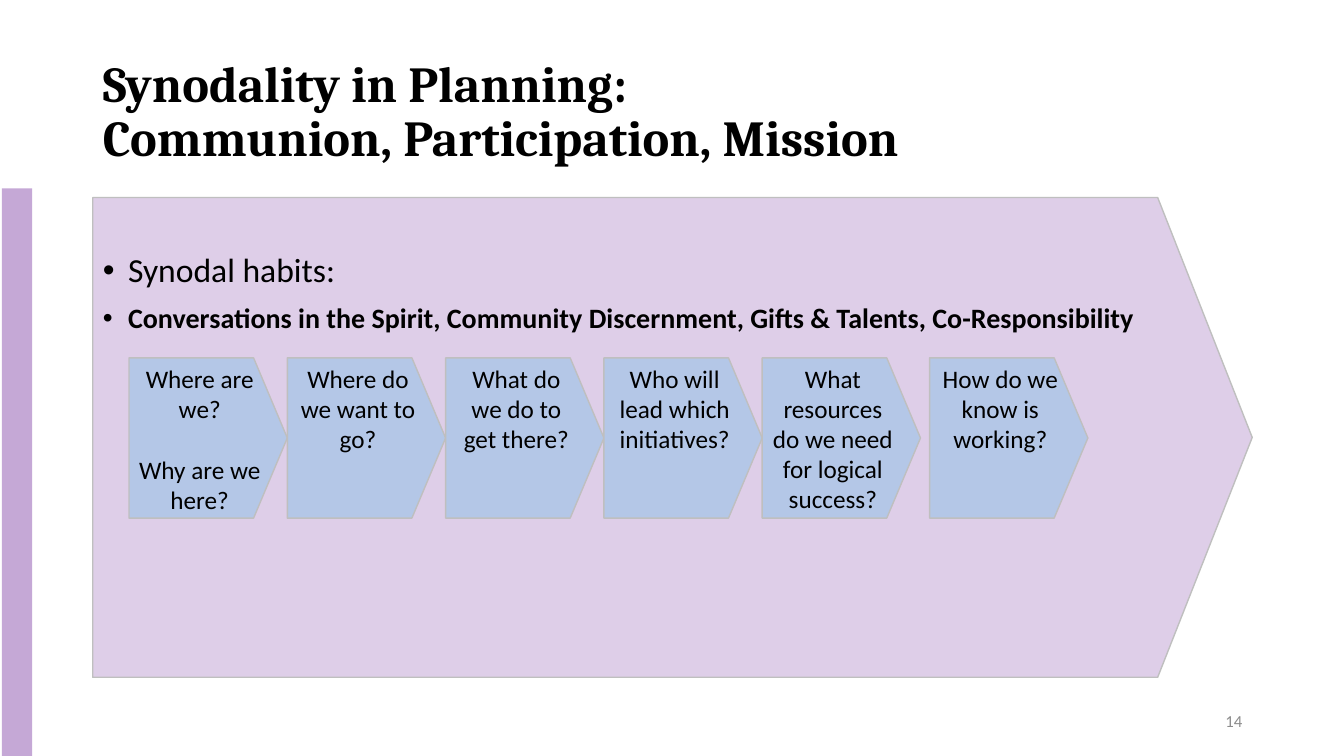
import pptx
import pptx.dml.color
import pptx.enum.shapes
import pptx.enum.text
import pptx.oxml.xmlchemy
import pptx.util
from pptx.oxml.xmlchemy import OxmlElement
from pptx.util import Inches, Pt

ALIGN = pptx.enum.text.PP_ALIGN
ANCHOR = pptx.enum.text.MSO_ANCHOR
SHAPES = pptx.enum.shapes.MSO_SHAPE

COLORS = {
    "text": "000000",
    "number": "8C8C8C",
    "bar": "AD84C6",
    "arrow": "DECEE8",
    "step": "B4C7E7",
    "outline": "BFBFBF",
}

HABITS = [
    ("Synodal habits:", 24, False),
    ("Conversations in the Spirit, Community Discernment, "
     "Gifts & Talents, Co-Responsibility", 20, True),
]
STEPS = [
    "Where are we?\nWhy are we here?",
    "Where do we want to go?",
    "What do we do to get there?",
    "Who will lead which initiatives?",
    "What resources do we need for logical success?",
    "How do we know is working?",
]


def rgb(name):
    return pptx.dml.color.RGBColor.from_string(COLORS[name])


def place(shape, left, top, width, height):
    shape.left, shape.top = Inches(left), Inches(top)
    shape.width, shape.height = Inches(width), Inches(height)


def paint(shape, fill):
    shape.fill.solid()
    shape.fill.fore_color.rgb = rgb(fill)
    shape.line.color.rgb = rgb("outline")
    shape.line.width = Pt(1)


def format_runs(paragraph, size, font="Calibri", color="text", bold=False):
    for run in paragraph.runs:
        run.font.name = font
        run.font.size = Pt(size)
        run.font.bold = bold
        run.font.color.rgb = rgb(color)


def add_bullet(paragraph):
    properties = paragraph._p.get_or_add_pPr()
    properties.set("marL", str(Inches(0.25)))
    properties.set("indent", str(Inches(-0.25)))
    font = OxmlElement("a:buFont")
    font.set("typeface", "Arial")
    bullet = OxmlElement("a:buChar")
    bullet.set("char", "•")
    properties.extend([font, bullet])


def add_side_bar(slide, left, top, width, height):
    bar = slide.shapes.add_shape(SHAPES.RECTANGLE, 0, 0, 0, 0)
    place(bar, left, top, width, height)
    bar.shadow.inherit = False
    bar.fill.solid()
    bar.fill.fore_color.rgb = rgb("bar")
    bar.line.fill.background()
    alpha = OxmlElement("a:alpha")
    alpha.set("val", "70000")
    bar.fill._xPr.solidFill[0].append(alpha)


def fill_title(slide, left, top, width, height):
    title = slide.shapes.title
    place(title, left, top, width, height)
    frame = title.text_frame
    frame.text = "Synodality in Planning: \vCommunion, Participation, Mission"
    frame.auto_size = pptx.enum.text.MSO_AUTO_SIZE.NONE
    frame.vertical_anchor = ANCHOR.MIDDLE
    paragraph = frame.paragraphs[0]
    paragraph.alignment = ALIGN.LEFT
    paragraph.line_spacing = 0.9
    format_runs(paragraph, 36, font="Cambria", bold=True)


def fill_habits_arrow(slide, left, top, width, height):
    """Turn the body placeholder into the large arrow behind the steps."""
    body = slide.placeholders[1]
    place(body, left, top, width, height)
    geometry = OxmlElement("a:prstGeom")
    geometry.set("prst", "homePlate")
    adjustments = OxmlElement("a:avLst")
    guide = OxmlElement("a:gd")
    guide.set("name", "adj")
    guide.set("fmla", "val 19700")
    adjustments.append(guide)
    geometry.append(adjustments)
    body._element.spPr.append(geometry)
    paint(body, "arrow")

    frame = body.text_frame
    frame.text = "\n".join(text for text, size, bold in HABITS)
    frame.auto_size = pptx.enum.text.MSO_AUTO_SIZE.NONE
    frame.vertical_anchor = ANCHOR.TOP
    frame.margin_top = Inches(0.56)
    for index, (text, size, bold) in enumerate(HABITS):
        paragraph = frame.paragraphs[index]
        add_bullet(paragraph)
        paragraph.line_spacing = 0.9
        paragraph.space_before = Pt(10 if index else 0)
        format_runs(paragraph, size, bold=bold)


def add_step(slide, text, left, top, width, height):
    step = slide.shapes.add_shape(SHAPES.PENTAGON, 0, 0, 0, 0)
    place(step, left, top, width, height)
    step.adjustments[0] = 0.213
    step.shadow.inherit = False
    paint(step, "step")
    frame = step.text_frame
    frame.text = text
    frame.word_wrap = True
    frame.vertical_anchor = ANCHOR.TOP
    for index, paragraph in enumerate(frame.paragraphs):
        paragraph.alignment = ALIGN.CENTER
        paragraph.space_before = Pt(22 if index else 0)
        format_runs(paragraph, 18)


def add_steps(slide, left, top, width, height):
    """Lay the steps edge to edge, with a small gap before the last one."""
    last_gap = 0.09
    step_width = (width - last_gap) / len(STEPS)
    for index, text in enumerate(STEPS):
        gap = last_gap if index == len(STEPS) - 1 else 0
        add_step(slide, text, left + index * step_width + gap, top,
                 step_width, height)


def add_slide_number(slide, left, top, width, height):
    box = slide.shapes.add_textbox(0, 0, 0, 0)
    place(box, left, top, width, height)
    frame = box.text_frame
    frame.text = "14"
    frame.word_wrap = True
    frame.vertical_anchor = ANCHOR.MIDDLE
    frame.paragraphs[0].alignment = ALIGN.RIGHT
    format_runs(frame.paragraphs[0], 12, color="number")


def main():
    presentation = pptx.Presentation()
    presentation.slide_width = Inches(13.33)
    presentation.slide_height = Inches(7.5)
    slide = presentation.slides.add_slide(presentation.slide_layouts[1])
    add_side_bar(slide, 0.02, 1.87, 0.3, 5.63)
    fill_title(slide, 0.92, 0.4, 10.91, 1.45)
    fill_habits_arrow(slide, 0.92, 1.96, 11.5, 4.76)
    add_steps(slide, 1.28, 3.55, 9.51, 1.59)
    add_slide_number(slide, 9.42, 6.95, 3, 0.4)
    presentation.save("out.pptx")


if __name__ == "__main__":
    main()
